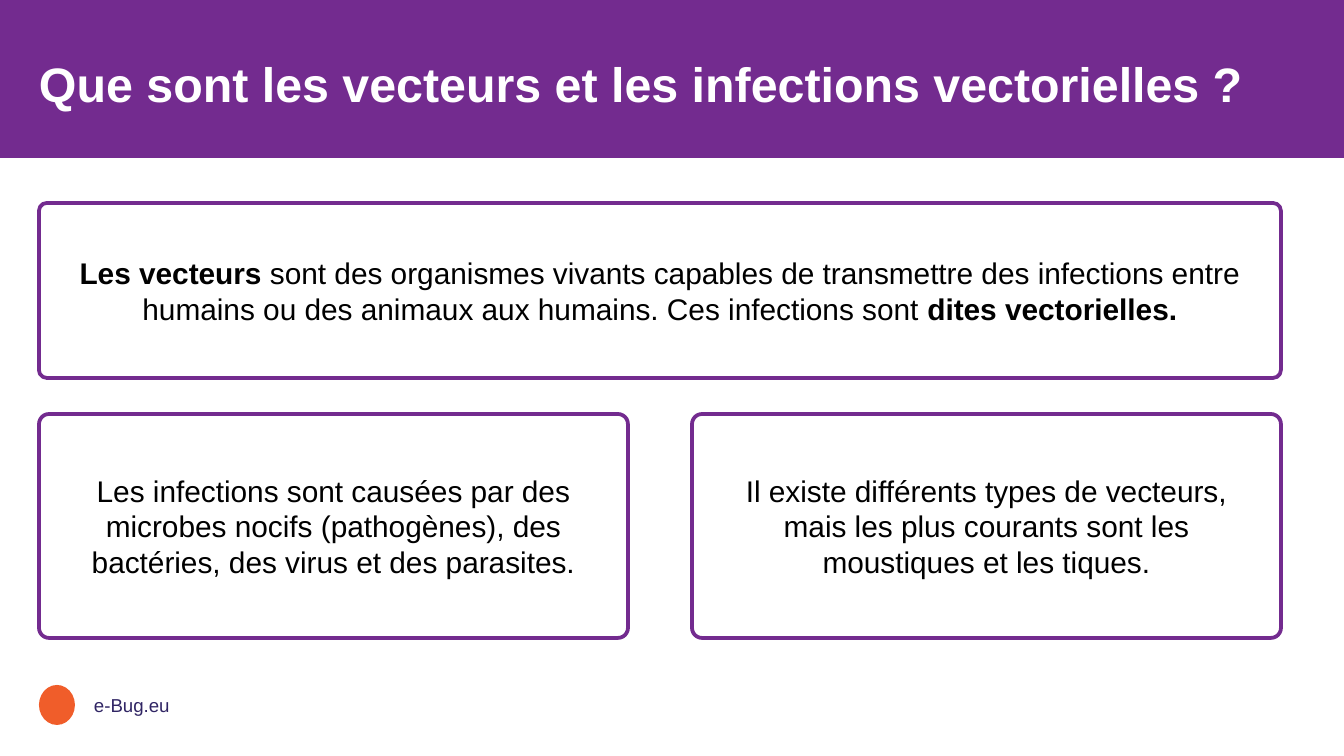
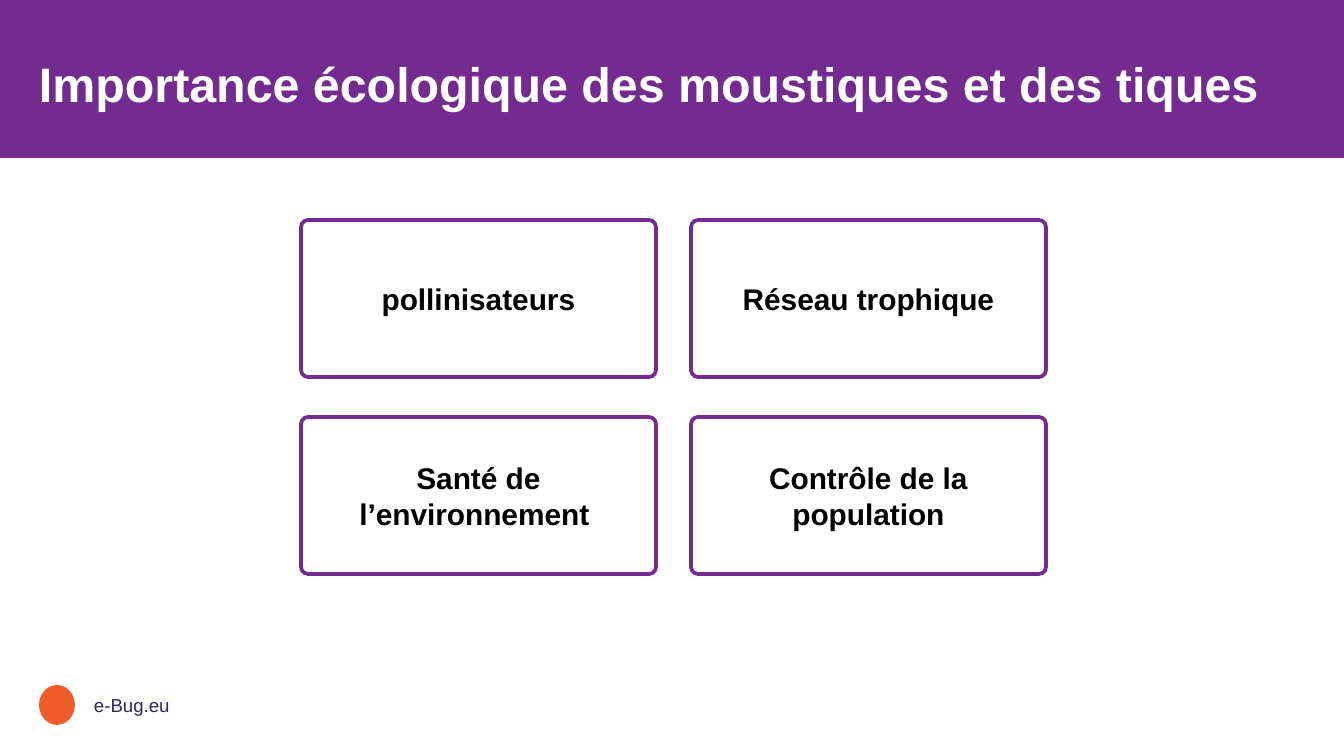
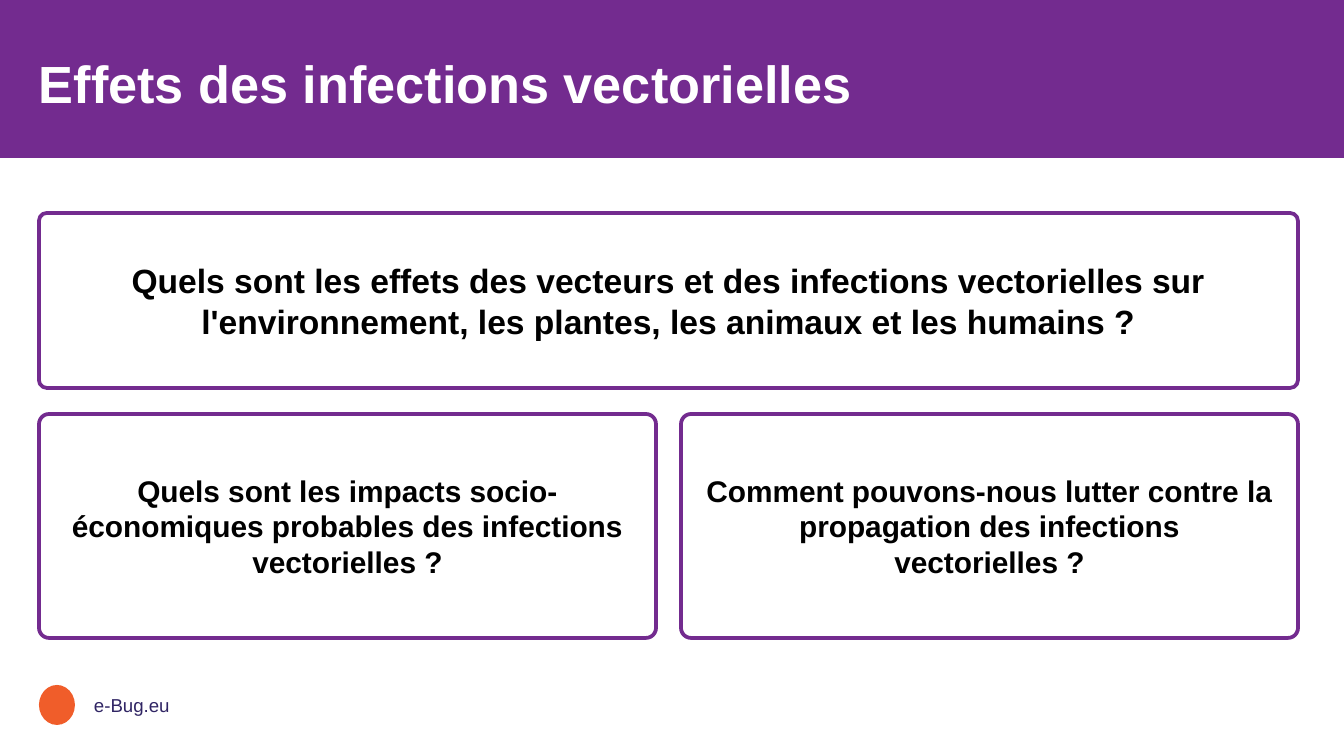
from pptx import Presentation
from pptx.dml.color import RGBColor
from pptx.enum.shapes import MSO_SHAPE
from pptx.enum.text import MSO_ANCHOR, MSO_AUTO_SIZE, PP_ALIGN
from pptx.util import Emu, Pt

SCALE = 914400 / 134.4
WIDE, HIGH = 1344, 756
EDGE = 39
FONT = "Arial"
PURPLE = RGBColor(0x73, 0x2B, 0x8F)
NAVY = RGBColor(0x30, 0x25, 0x64)
ORANGE = RGBColor(0xF0, 0x5D, 0x2A)
WHITE = RGBColor(0xFF, 0xFF, 0xFF)
BLACK = RGBColor(0, 0, 0)
RECT, ROUND, OVAL = MSO_SHAPE.RECTANGLE, MSO_SHAPE.ROUNDED_RECTANGLE, MSO_SHAPE.OVAL
LEFT, CENTER = PP_ALIGN.LEFT, PP_ALIGN.CENTER
MIDDLE, TOP = MSO_ANCHOR.MIDDLE, MSO_ANCHOR.TOP
NO_FIT = MSO_AUTO_SIZE.NONE


def px(count):
    return Emu(round(count * SCALE))


def place(box):
    return [px(side) for side in box]


def write(frame, runs, size, color, align, anchor, pads):
    frame.auto_size = NO_FIT
    frame.word_wrap = True
    frame.vertical_anchor = anchor
    (frame.margin_left, frame.margin_top,
     frame.margin_right, frame.margin_bottom) = place(pads)
    para = frame.paragraphs[0]
    para.alignment = align
    for text, bold in runs:
        run = para.add_run()
        run.text = text
        font = run.font
        font.name, font.size, font.bold = FONT, Pt(size), bold
        font.color.rgb = color
    return para


def shape(slide, kind, box, fill, line=None):
    item = slide.shapes.add_shape(kind, *place(box))
    item.shadow.inherit = False
    item.fill.solid()
    item.fill.fore_color.rgb = fill
    if line is None:
        item.line.fill.background()
    else:
        item.line.color.rgb = line
        item.line.width = Pt(2)
    return item


def card(slide, box, runs, size=16):
    item = shape(slide, ROUND, box, WHITE, PURPLE)
    item.adjustments[0] = 0.045
    write(item.text_frame, runs, size, BLACK, CENTER, MIDDLE, (16, 11, 16, 11))


def header(slide, box, text, size):
    left, top, width, height = box
    band = shape(slide, RECT, box, PURPLE)
    tree = band._element.getparent()
    tree.insert(2, band._element)
    title = slide.shapes.title
    title.left, title.top, title.width, title.height = place(
        (left + EDGE, top + 39, width - 85, height - 63))
    para = write(title.text_frame, [(text, True)], size, WHITE,
                 LEFT, MIDDLE, (0, 7, 13, 7))
    para.line_spacing = 0.9


def footer(slide, box):
    left, top, width, height = box
    shape(slide, OVAL, (left, top, 36, height), ORANGE)
    note = slide.shapes.add_textbox(*place((left + 42, top + 2, width - 42, height)))
    write(note.text_frame, [("e-Bug.eu", False)], 10, NAVY,
          LEFT, TOP, (13, 7, 13, 7))


def page(deck, text, size):
    slide = deck.slides.add_slide(deck.slide_layouts[5])
    header(slide, (0, 0, WIDE, 158), text, size)
    footer(slide, (EDGE, 685, 144, 40))
    return slide


def grid(slide, box, gaps, cards, cols=2):
    left, top, width, height = box
    across, down = gaps
    rows = len(cards) // cols
    wide = (width - across * (cols - 1)) // cols
    high = (height - down * (rows - 1)) // rows
    for index, runs in enumerate(cards):
        row, col = divmod(index, cols)
        card(slide, (left + col * (wide + across), top + row * (high + down),
                     wide, high), runs)


def trio(slide, box, gap, lead, size, pair):
    left, top, width, height = box
    card(slide, (left, top, width, 175), lead, size)
    grid(slide, (left, top + height - 224, width, 224), (gap, 0), pair)


def main():
    deck = Presentation()
    deck.slide_width, deck.slide_height = px(WIDE), px(HIGH)

    slide = page(deck, "Que sont les vecteurs et les infections vectorielles ?", 25.9)
    trio(slide, (EDGE, 203, 1242, 435), 64, [
        ("Les vecteurs ", True),
        ("sont des organismes vivants capables de transmettre des infections "
         "entre humains ou des animaux aux humains. Ces infections sont ", False),
        ("dites vectorielles.", True),
    ], 16, [
        [("Les infections sont causées par des microbes nocifs (pathogènes), "
          "des bactéries, des virus et des parasites.", False)],
        [("Il existe différents types de vecteurs, mais les plus courants "
          "sont les moustiques et les tiques.", False)],
    ])

    slide = page(deck, "Importance écologique des moustiques et des tiques", 25.9)
    roles = ("pollinisateurs", "Réseau trophique",
             "Santé de l’environnement ", "Contrôle de la population")
    grid(slide, (301, 220, 745, 354), (35, 40), [[(role, True)] for role in roles])

    slide = page(deck, "Effets des infections vectorielles", 28)
    trio(slide, (EDGE, 213, 1259, 425), 25, [
        ("Quels sont les effets des vecteurs et des infections vectorielles sur "
         "l'environnement, les plantes, les animaux et les humains ?", True),
    ], 18, [
        [("Quels sont les impacts socio-économiques probables des infections "
          "vectorielles ?", True)],
        [("Comment pouvons-nous lutter contre la propagation des infections "
          "vectorielles ?", True)],
    ])

    deck.save("out.pptx")


if __name__ == "__main__":
    main()
